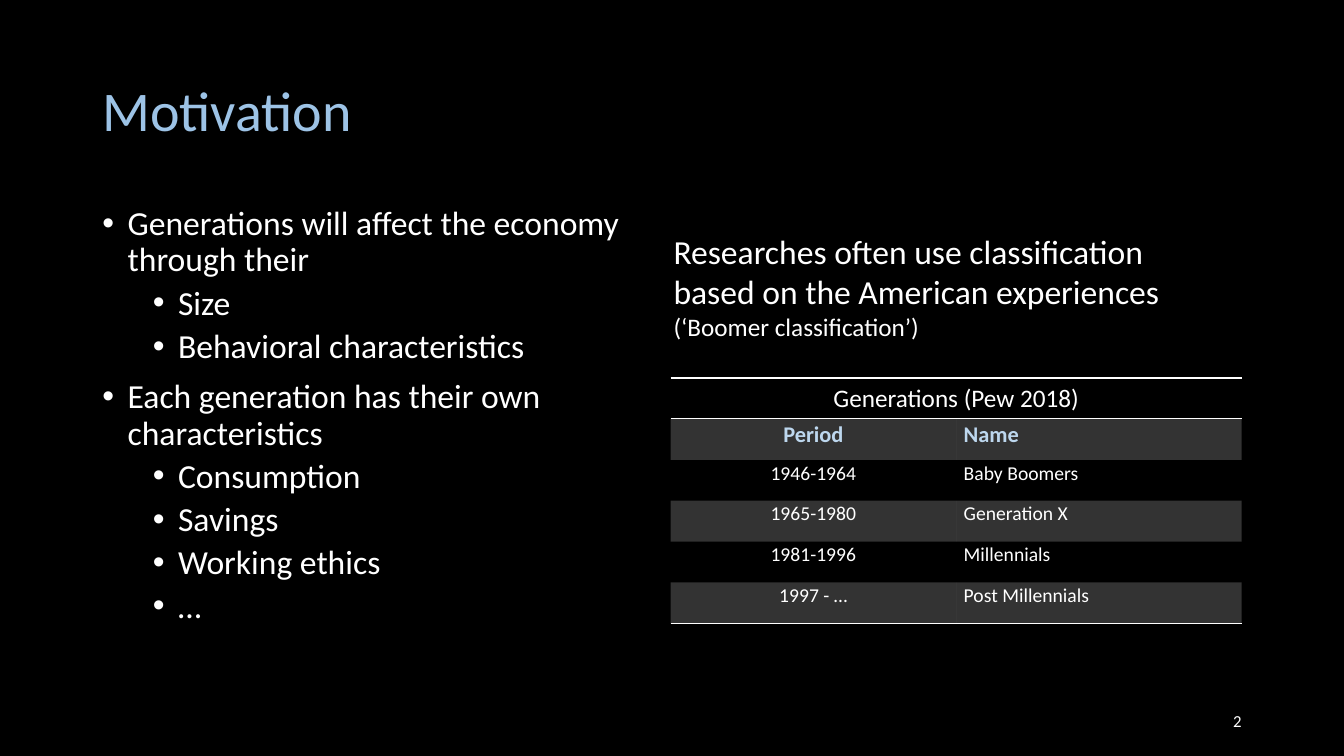
from lxml.etree import SubElement
from pptx import Presentation
from pptx.dml.color import RGBColor
from pptx.enum.text import MSO_ANCHOR, MSO_AUTO_SIZE, PP_ALIGN
from pptx.oxml.ns import qn
from pptx.util import Pt

COLORS = {"back": "000000", "text": "FFFFFF", "title": "9DC3E6", "head": "BDD7EE"}
FONT = "Calibri"
PLAIN = "{2D5ABB26-0587-4C30-8999-92F81FD0307C}"  # table style without grid

POINTS = [
    (0, "Generations will affect the economy through their"),
    (1, "Size"),
    (1, "Behavioral characteristics"),
    (0, "Each generation has their own characteristics"),
    (1, "Consumption"),
    (1, "Savings"),
    (1, "Working ethics"),
    (1, "…"),
]
ROWS = [
    ("Period", "Name"),
    ("1946-1964", "Baby Boomers"),
    ("1965-1980", "Generation X"),
    ("1981-1996", "Millennials"),
    ("1997 - …", "Post Millennials"),
]


def color(name):
    return RGBColor.from_string(COLORS[name])


def style(para, size, tint="text", align=PP_ALIGN.LEFT, bold=False):
    para.alignment = align
    for run in para.runs:
        font = run.font
        font.name, font.size, font.bold = FONT, Pt(size), bold
        font.color.rgb = color(tint)


def place(shape, left, top, width, height):
    shape.left, shape.top = Pt(left), Pt(top)
    shape.width, shape.height = Pt(width), Pt(height)


def add_title(slide, text):
    title = slide.shapes.title
    place(title, 66, 28.8, 828, 104.4)
    frame = title.text_frame
    frame.text = text
    frame.vertical_anchor = MSO_ANCHOR.MIDDLE
    frame.auto_size = MSO_AUTO_SIZE.NONE
    frame.paragraphs[0].line_spacing = 0.9
    style(frame.paragraphs[0], 40, "title")


def add_list(slide, points):
    body = slide.placeholders[1]
    place(body, 66, 144, 408, 342.6)
    frame = body.text_frame
    frame.text = "\n".join(text for _, text in points)
    frame.auto_size = MSO_AUTO_SIZE.NONE
    for i, (para, (level, _)) in enumerate(zip(frame.paragraphs, points)):
        para.level = level
        props = para._p.get_or_add_pPr()
        props.set("marL", str(Pt(18 + 36 * level)))
        props.set("indent", str(Pt(-18)))
        SubElement(props, qn("a:buFont"), typeface="Arial")
        SubElement(props, qn("a:buChar"), char="•")
        para.line_spacing = 0.9
        para.space_before = Pt((5 if level else 10) if i else 0)
        style(para, 24)


def add_text(slide, box, lines, align=PP_ALIGN.LEFT, anchor=MSO_ANCHOR.TOP):
    frame = slide.shapes.add_textbox(*map(Pt, box)).text_frame
    frame.word_wrap = True
    frame.vertical_anchor = anchor
    frame.text = "\n".join(text for text, _ in lines)
    for para, (_, size) in zip(frame.paragraphs, lines):
        style(para, size, align=align)


def rule(cell, *sides):
    for side in sides:
        line = SubElement(cell._tc.get_or_add_tcPr(), qn("a:" + side), w=str(Pt(1)))
        fill = SubElement(line, qn("a:solidFill"))
        SubElement(fill, qn("a:srgbClr"), val=COLORS["text"])


def shade(cell, on):
    if not on:
        cell.fill.background()
        return
    cell.fill.solid()
    cell.fill.fore_color.rgb = color("text")
    tint = cell._tc.tcPr.find(".//" + qn("a:solidFill") + "/" + qn("a:srgbClr"))
    for node in cell._tc.tcPr.findall(qn("a:solidFill")):
        tint = node.find(qn("a:srgbClr"))
    SubElement(tint, qn("a:alpha"), val="20000")


def add_grid(slide, head, rows):
    count = len(rows) + 1
    frame = slide.shapes.add_table(count, 2, Pt(479), Pt(270), Pt(408), Pt(29.2 * count))
    grid = frame.table
    grid._tbl.tblPr.find(qn("a:tableStyleId")).text = PLAIN
    grid.first_row = grid.horz_banding = False

    # Caption row across both columns
    top = grid.cell(0, 0)
    top.merge(grid.cell(0, 1))
    top.text_frame.text = head
    style(top.text_frame.paragraphs[0], 18, align=PP_ALIGN.CENTER)
    for col in range(2):
        rule(grid.cell(0, col), "lnT", "lnB")
        shade(grid.cell(0, col), False)

    # Banded rows below
    for r, row in enumerate(rows, 1):
        for c, text in enumerate(row):
            cell = grid.cell(r, c)
            cell.margin_left = cell.margin_right = Pt(5.4)
            cell.margin_top = cell.margin_bottom = Pt(0)
            cell.text_frame.text = text
            para = cell.text_frame.paragraphs[0]
            para.line_spacing = 1.07
            align = PP_ALIGN.LEFT if c else PP_ALIGN.CENTER
            if r == 1:
                style(para, 16, "head", align, True)
            else:
                style(para, 14, align=align)
            if r == len(rows):
                rule(cell, "lnB")
            shade(cell, r % 2 == 1)


def main():
    deck = Presentation()
    deck.slide_width, deck.slide_height = Pt(960), Pt(540)
    slide = deck.slides.add_slide(deck.slide_layouts[1])
    slide.background.fill.solid()
    slide.background.fill.fore_color.rgb = color("back")

    # Left side
    add_title(slide, "Motivation")
    add_list(slide, POINTS)

    # Right side
    add_grid(slide, "Generations (Pew 2018)", ROWS)
    add_text(slide, (678, 500.4, 216, 28.8), [("2", 12)],
             PP_ALIGN.RIGHT, MSO_ANCHOR.MIDDLE)
    add_text(slide, (474, 161.3, 397.4, 87.1), [
        ("Researches often use classification based on the American experiences", 24),
        ("(‘Boomer classification’)", 18),
    ])
    deck.save("out.pptx")


if __name__ == "__main__":
    main()
